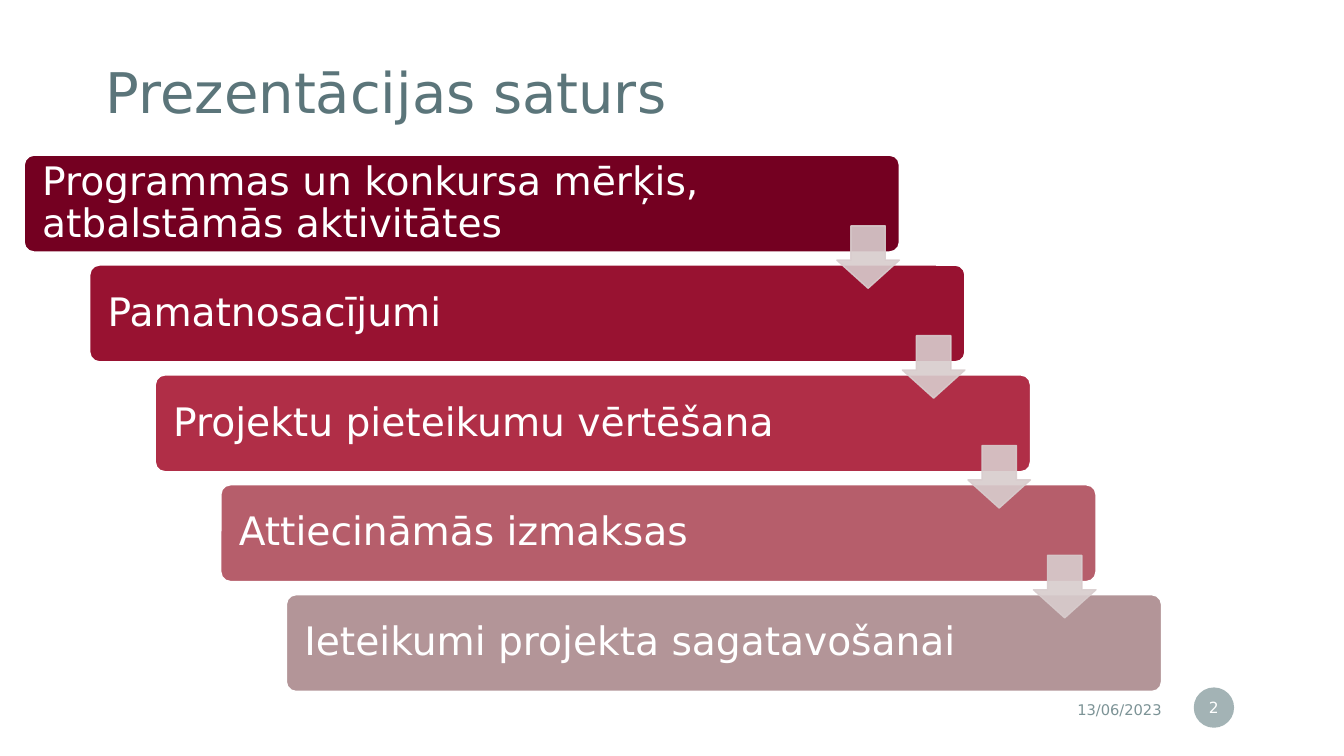
from lxml import etree
from pptx import Presentation
from pptx.dml.color import RGBColor
from pptx.enum.shapes import MSO_SHAPE
from pptx.enum.text import MSO_ANCHOR, PP_ALIGN
from pptx.oxml.ns import qn
from pptx.util import Pt

PX = 9144  # 100 px to the inch
BAR, ARROW, DISC = MSO_SHAPE.ROUNDED_RECTANGLE, MSO_SHAPE.DOWN_ARROW, MSO_SHAPE.OVAL
LEFT, MID, RIGHT = PP_ALIGN.LEFT, PP_ALIGN.CENTER, PP_ALIGN.RIGHT
WHITE = RGBColor(0xFF, 0xFF, 0xFF)
SLATE = RGBColor(0x5B, 0x75, 0x7A)
GREY = RGBColor(0x7C, 0x93, 0x96)
PALE = RGBColor(0xD8, 0xCC, 0xCD)
STEPS = [
    ("Programmas un konkursa mērķis, atbalstāmās aktivitātes", RGBColor(0x74, 0x00, 0x21)),
    ("Pamatnosacījumi", RGBColor(0x98, 0x12, 0x31)),
    ("Projektu pieteikumu vērtēšana", RGBColor(0xB0, 0x2E, 0x47)),
    ("Attiecināmās izmaksas", RGBColor(0xB6, 0x5E, 0x6B)),
    ("Ieteikumi projekta sagatavošanai", RGBColor(0xB3, 0x95, 0x98)),
]
DX, DY = 65, 109

deck = Presentation()
deck.slide_width, deck.slide_height = 1333 * PX, 750 * PX
shapes = deck.slides.add_slide(deck.slide_layouts[6]).shapes


def write(shape, text, size, color, align, pad, space=1.0):
    frame = shape.text_frame
    sides = ("margin_left", "margin_top", "margin_right", "margin_bottom")
    form = {"word_wrap": True, "vertical_anchor": MSO_ANCHOR.MIDDLE}
    form.update((side, gap * PX) for side, gap in zip(sides, pad))
    for name, value in form.items():
        setattr(frame, name, value)
    para = frame.paragraphs[0]
    para.alignment, para.line_spacing = align, space
    run = para.add_run()
    run.text = text
    for name, value in {"size": Pt(size), "name": "DejaVu Sans"}.items():
        setattr(run.font, name, value)
    run.font.color.rgb = color


def draw(kind, box, fill, line=None, alpha=100):
    shape = shapes.add_shape(kind, *(n * PX for n in box))
    shape.shadow.inherit = False
    shape.fill.solid()
    shape.fill.fore_color.rgb = fill
    if line is None:
        shape.line.fill.background()
    else:
        shape.line.color.rgb = line
        shape.line.width = Pt(1)
    if alpha < 100:
        for tint in shape.element.spPr.iter(qn("a:srgbClr")):
            etree.SubElement(tint, qn("a:alpha"), val=str(alpha * 1000))
    return shape


# Title and date
title = shapes.add_textbox(85 * PX, 35 * PX, 839 * PX, 119 * PX)
write(title, "Prezentācijas saturs", 40, SLATE, LEFT, (20, 20, 20, 20), 0.9)
date = shapes.add_textbox(861 * PX, 686 * PX, 301 * PX, 35 * PX)
write(date, "13/06/2023", 10.5, GREY, RIGHT, (10, 5, 10, 5))

# Slide number
disc = draw(DISC, (1184, 682, 40, 40), GREY, alpha=70)
write(disc, "2", 11, WHITE, MID, (2, 5, 2, 5))

# Staircase of topics
for i, (text, color) in enumerate(STEPS):
    bar = draw(BAR, (24 + i * DX, 154 + i * DY, 868, 96), color, WHITE)
    bar.adjustments[0] = 0.1
    write(bar, text, 28, WHITE, LEFT, (15, 12, 100, 12), 0.9)

# Arrows from each step to the next
for i in range(len(STEPS) - 1):
    arrow = draw(ARROW, (830 + i * DX, 224 + i * DY, 62, 62), PALE, PALE, 90)
    arrow.adjustments[0], arrow.adjustments[1] = 0.45, 0.55
    # head length, then shaft width
    arrow.adjustments[0], arrow.adjustments[1] = 0.55, 0.45

deck.save("out.pptx")
